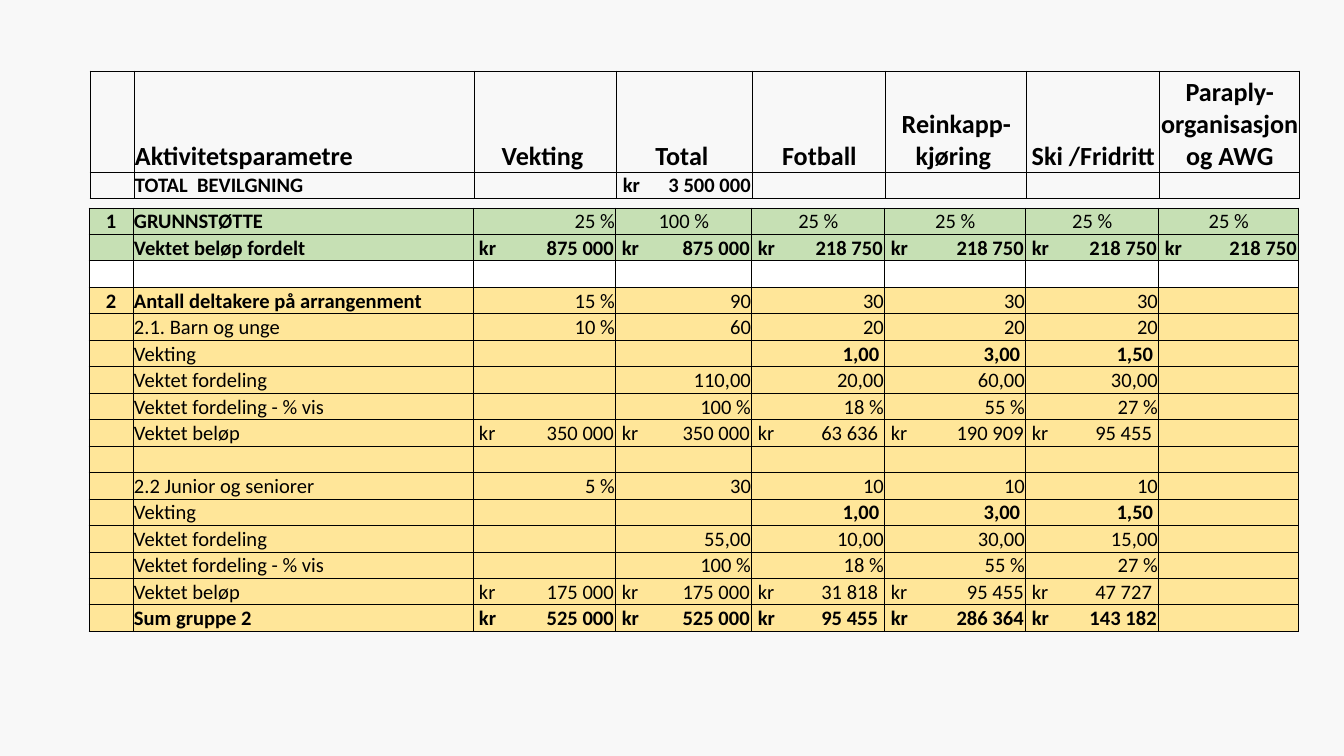
from dataclasses import dataclass
from pptx import Presentation
from pptx.dml.color import RGBColor
from pptx.enum.text import MSO_ANCHOR, PP_ALIGN as Align
from pptx.oxml.xmlchemy import OxmlElement as Element
from pptx.util import Emu, Pt

PX = 914400 / 134.4
COLORS = {"page": "F8F8F8", "ink": "000000", "white": "FFFFFF",
          "green": "C6E0B4", "yellow": "FFE699"}
FONT = "Calibri"
COLUMNS = [44, 340, 143, 136, 133, 141, 133, 140]
KR_INSET = 6


def px(length):
    return Emu(round(length * PX))


@dataclass
class Row:
    label: str = ""
    values: tuple = ()
    number: str = ""
    fill: str = ""
    bold_label: bool = False
    bold_values: bool = False
    align: Align = Align.RIGHT
    size: int = 11

    def cells(self):
        """Text, alignment and weight of each column."""
        cells = [(self.number, Align.CENTER, True),
                 (self.label, Align.LEFT, self.bold_label)]
        cells += [(text, self.align, self.bold_values) for text in self.values]
        return cells + [("", Align.LEFT, False)] * (len(COLUMNS) - len(cells))


class BudgetPage:
    def __init__(self, deck):
        self.page = deck.slides.add_slide(deck.slide_layouts[6])
        background = self.page.background.fill
        background.solid()
        background.fore_color.rgb = RGBColor.from_string(COLORS["page"])

    def table(self, left, top, height, rows, first_height=None):
        frame = self.page.shapes.add_table(len(rows), len(COLUMNS), px(left), px(top),
                                           px(sum(COLUMNS)), px(height))
        table = frame.table
        table.first_row = table.horz_banding = False
        for column, width in zip(table.columns, COLUMNS):
            column.width = px(width)
        if first_height:
            table.rows[0].height = px(first_height)
            table.rows[1].height = px(height - first_height)
        for r, row in enumerate(rows):
            for c, (text, align, bold) in enumerate(row.cells()):
                self.cell(table.cell(r, c), row, COLUMNS[c], text, align, bold)

    def cell(self, cell, row, width, text, align, bold):
        is_amount = text.startswith("kr\t")
        cell.vertical_anchor = MSO_ANCHOR.BOTTOM
        cell.margin_left = px(KR_INSET if is_amount else 1)
        cell.margin_right = cell.margin_top = px(1)
        cell.margin_bottom = 0
        self.borders(cell)
        if row.fill:
            cell.fill.solid()
            cell.fill.fore_color.rgb = RGBColor.from_string(COLORS[row.fill])
        else:
            cell.fill.background()

        para = cell.text_frame.paragraphs[0]
        para.alignment = Align.LEFT if is_amount else align
        if is_amount:
            self.right_tab(para, width - KR_INSET - 2)
        if text:
            para.add_run().text = text
        else:
            # An empty cell needs its own size to keep the row low
            end = Element("a:endParaRPr")
            end.set("sz", str(row.size * 100))
            para._p.append(end)
        para.font.name = FONT
        para.font.size = Pt(row.size)
        para.font.bold = bold
        para.font.color.rgb = RGBColor.from_string(COLORS["ink"])

    def right_tab(self, para, position):
        tabs, tab = Element("a:tabLst"), Element("a:tab")
        tab.set("pos", str(px(position)))
        tab.set("algn", "r")
        tabs.append(tab)
        para._p.get_or_add_pPr().append(tabs)

    def borders(self, cell):
        properties = cell._tc.get_or_add_tcPr()
        for side in ("lnL", "lnR", "lnT", "lnB"):
            line, fill, color = (Element(f"a:{tag}") for tag in (side, "solidFill", "srgbClr"))
            line.set("w", str(Pt(0.5)))
            color.set("val", COLORS["ink"])
            fill.append(color)
            line.append(fill)
            properties.append(line)


def kr(*amounts):
    return tuple(f"kr\t{amount}" for amount in amounts)


def participants(title, share, counts, weighted, amounts):
    """Rows for one age group of participants."""
    return [
        Row(title, (share, *counts), fill="yellow"),
        Row("Vekting", ("", "", "1,00 ", "3,00 ", "1,50 "), fill="yellow", bold_values=True),
        Row("Vektet fordeling", ("", *weighted), fill="yellow"),
        Row("Vektet fordeling - % vis", ("", "100 %", "18 %", "55 %", "27 %"), fill="yellow"),
        Row("Vektet beløp", kr(*amounts), fill="yellow"),
    ]


HEADER = [
    Row("Aktivitetsparametre",
        ("Vekting ", "Total ", "Fotball", "Reinkapp-kjøring ", "Ski /Fridritt",
         "Paraply-organisasjon og AWG"),
        bold_label=True, bold_values=True, align=Align.CENTER, size=14),
    Row("TOTAL  BEVILGNING", ("", *kr("3 500 000")), bold_label=True, bold_values=True),
]

GRANTS = [
    # Basic support
    Row("GRUNNSTØTTE", ("25 %", "100 %") + ("25 %",) * 4, number="1", fill="green",
        bold_label=True, align=Align.CENTER),
    Row("Vektet beløp fordelt", kr(*["875 000"] * 2, *["218 750"] * 4), fill="green",
        bold_label=True, bold_values=True),
    Row(fill="white"),
    # Participants
    Row("Antall deltakere på arrangenment", ("15 %", "90", "30", "30", "30"), number="2",
        fill="yellow", bold_label=True),
    *participants("2.1. Barn og unge", "10 %", ("60", "20", "20", "20"),
                  ("110,00", "20,00", "60,00", "30,00"),
                  ("350 000", "350 000", "63 636 ", "190 909", "95 455 ")),
    Row(fill="yellow"),
    *participants("2.2 Junior og seniorer", "5 %", ("30", "10", "10", "10"),
                  ("55,00", "10,00", "30,00", "15,00"),
                  ("175 000", "175 000", "31 818 ", "95 455", "47 727 ")),
    Row("Sum gruppe 2", kr("525 000", "525 000", "95 455 ", "286 364", "143 182"),
        fill="yellow", bold_label=True, bold_values=True),
]


def main():
    deck = Presentation()
    deck.slide_width, deck.slide_height = px(1344), px(756)
    budget = BudgetPage(deck)
    # Column heads and total grant
    budget.table(90, 71, 127, HEADER, first_height=101)
    # Distribution by parameter; the first share stands to the right
    GRANTS[0].values = ("25 %", *GRANTS[0].values[1:])
    budget.table(89, 208, 424, GRANTS)
    first_share = budget.page.shapes[1].table.cell(0, 2)
    first_share.text_frame.paragraphs[0].alignment = Align.RIGHT
    deck.save("out.pptx")


if __name__ == "__main__":
    main()
